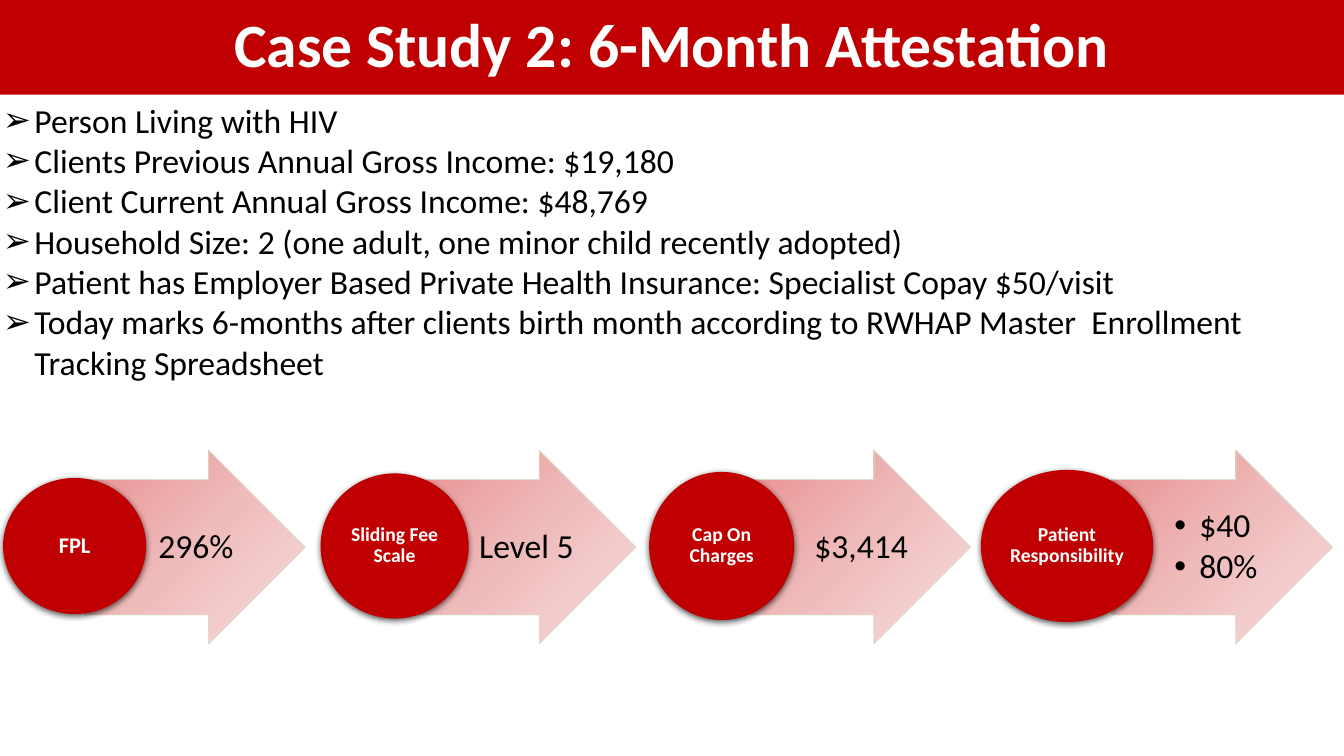
from dataclasses import dataclass

from pptx import Presentation
from pptx.dml.color import RGBColor
from pptx.enum.shapes import MSO_SHAPE
from pptx.enum.text import MSO_ANCHOR, MSO_AUTO_SIZE, PP_ALIGN
from pptx.oxml import parse_xml
from pptx.oxml.ns import nsdecls, qn
from pptx.shapes.autoshape import Shape
from pptx.slide import Slide
from pptx.text.text import TextFrame
from pptx.util import Pt


@dataclass(frozen=True)
class Theme:
    font: str = "Calibri"
    red: str = "C00000"
    white: str = "FFFFFF"
    black: str = "000000"
    arrow_line: str = "D5E3CF"
    arrow_stops: tuple[str, ...] = ("E98F8F", "EFBCBC", "F7DEDE")
    title_size: float = 44
    body_size: float = 24


@dataclass(frozen=True)
class TextStyle:
    size: float
    color: str
    bold: bool = False
    bullet: str = ""
    indent: float = 0
    line_spacing: float = 1
    space_after: float = 0


@dataclass(frozen=True)
class Step:
    label: str
    label_size: float
    results: tuple[str, ...]
    arrow_left: float
    circle_left: float
    circle_width: float
    circle_height: float
    bulleted: bool = False


THEME = Theme()
PAGE_WIDTH, PAGE_HEIGHT = 960, 540
TITLE_HEIGHT = 67.7
ARROW_TOP, ARROW_WIDTH, ARROW_HEIGHT = 321.8, 157.7, 138.2
RESULT_OFFSET, RESULT_WIDTH, RESULT_HEIGHT = 39.6, 77, 96.5
CIRCLE_MIDDLE = 390

FACTS = (
    "Person Living with HIV",
    "Clients Previous Annual Gross Income: $19,180",
    "Client Current Annual Gross Income: $48,769",
    "Household Size: 2 (one adult, one minor child recently adopted)",
    "Patient has Employer Based Private Health Insurance: Specialist Copay $50/visit",
    "Today marks 6-months after clients birth month according to RWHAP Master  Enrollment Tracking Spreadsheet",
)

STEPS = (
    Step("FPL", 16, ("296%",), 60.5, 2.2, 102.2, 97.2),
    Step("Sliding Fee Scale", 14, ("Level 5",), 296.6, 229, 105.8, 103.7),
    Step("Cap On Charges", 14, ("$3,414",), 535.7, 463.7, 103.7, 105.8),
    Step("Patient Responsibility", 14, ("$40", "80%"), 794.2, 700.6, 123.1, 108.7, True),
)


def write(frame: TextFrame, lines: tuple[str, ...], style: TextStyle) -> None:
    for number, line in enumerate(lines):
        para = frame.paragraphs[0] if number == 0 else frame.add_paragraph()
        para.alignment = PP_ALIGN.LEFT if style.bullet else PP_ALIGN.CENTER
        if style.bullet:
            properties = para._p.get_or_add_pPr()
            properties.set("marL", str(Pt(style.indent)))
            properties.set("indent", str(-Pt(style.indent)))
            properties.append(parse_xml(f'<a:buFont {nsdecls("a")} typeface="Arial"/>'))
            properties.append(parse_xml(f'<a:buChar {nsdecls("a")} char="{style.bullet}"/>'))
        para.line_spacing = style.line_spacing
        para.space_before = Pt(0)
        para.space_after = Pt(style.space_after)
        span = para.add_run()
        span.text = line
        span.font.name = THEME.font
        span.font.size = Pt(style.size)
        span.font.bold = style.bold
        span.font.color.rgb = RGBColor.from_string(style.color)


def set_insets(frame: TextFrame, left: float, top: float, right: float, bottom: float) -> None:
    frame.margin_left, frame.margin_top = Pt(left), Pt(top)
    frame.margin_right, frame.margin_bottom = Pt(right), Pt(bottom)
    frame.vertical_anchor = MSO_ANCHOR.MIDDLE
    frame.word_wrap = True


def fill_solid(shape: Shape, color: str) -> None:
    shape.fill.solid()
    shape.fill.fore_color.rgb = RGBColor.from_string(color)


def fill_from_corner(shape: Shape, colors: tuple[str, ...]) -> None:
    interval = 100000 // (len(colors) - 1)
    stops = "".join(
        f'<a:gs pos="{number * interval}"><a:srgbClr val="{color}"/></a:gs>'
        for number, color in enumerate(colors)
    )
    gradient = parse_xml(
        f'<a:gradFill {nsdecls("a")} rotWithShape="1"><a:gsLst>{stops}</a:gsLst>'
        '<a:path path="circle"><a:fillToRect r="100000" b="100000"/></a:path></a:gradFill>'
    )
    shape.fill.background()
    properties = shape._element.spPr
    properties.replace(properties.find(qn("a:noFill")), gradient)


def add_title(page: Slide) -> None:
    title = page.shapes.title
    title.left, title.top = Pt(0), Pt(0)
    title.width, title.height = Pt(PAGE_WIDTH), Pt(TITLE_HEIGHT)
    fill_solid(title, THEME.red)
    title.text_frame.auto_size = MSO_AUTO_SIZE.NONE
    title.text_frame.vertical_anchor = MSO_ANCHOR.MIDDLE
    style = TextStyle(THEME.title_size, THEME.white, bold=True, line_spacing=0.9)
    write(title.text_frame, ("Case Study 2: 6-Month Attestation",), style)


def add_facts(page: Slide) -> None:
    box = page.shapes.add_textbox(Pt(-5), Pt(TITLE_HEIGHT), Pt(949.7), Pt(254.2))
    box.text_frame.word_wrap = True
    write(box.text_frame, FACTS, TextStyle(THEME.body_size, THEME.black, bullet="➢", indent=22.5))


def add_arrow(page: Slide, step: Step) -> None:
    arrow = page.shapes.add_shape(
        MSO_SHAPE.RIGHT_ARROW, Pt(step.arrow_left), Pt(ARROW_TOP), Pt(ARROW_WIDTH), Pt(ARROW_HEIGHT)
    )
    arrow.adjustments[0], arrow.adjustments[1] = 0.7, 0.5
    arrow.shadow.inherit = False
    fill_from_corner(arrow, THEME.arrow_stops)
    arrow.line.color.rgb = RGBColor.from_string(THEME.arrow_line)
    arrow.line.width = Pt(0.5)
    line_color = arrow.line._ln.find(".//" + qn("a:srgbClr"))
    line_color.append(parse_xml(f'<a:alpha {nsdecls("a")} val="90000"/>'))


def add_results(page: Slide, step: Step) -> None:
    box = page.shapes.add_textbox(
        Pt(step.arrow_left + RESULT_OFFSET),
        Pt(ARROW_TOP + (ARROW_HEIGHT - RESULT_HEIGHT) / 2),
        Pt(RESULT_WIDTH),
        Pt(RESULT_HEIGHT),
    )
    set_insets(box.text_frame, 5, 1.5, 2.2, 1.5)
    style = TextStyle(
        THEME.body_size,
        THEME.black,
        bullet="•" if step.bulleted else "",
        indent=18,
        line_spacing=0.9,
        space_after=3.6 if step.bulleted else 0,
    )
    write(box.text_frame, step.results, style)


def add_circle(page: Slide, step: Step) -> None:
    circle = page.shapes.add_shape(
        MSO_SHAPE.OVAL,
        Pt(step.circle_left),
        Pt(CIRCLE_MIDDLE - step.circle_height / 2),
        Pt(step.circle_width),
        Pt(step.circle_height),
    )
    fill_solid(circle, THEME.red)
    circle.line.fill.background()
    circle.shadow.inherit = False
    circle._element.spPr.find(qn("a:effectLst")).append(parse_xml(
        f'<a:outerShdw {nsdecls("a")} blurRad="{Pt(4.5)}" dist="{Pt(1.5)}" dir="5400000" rotWithShape="0">'
        f'<a:srgbClr val="{THEME.black}"><a:alpha val="63000"/></a:srgbClr></a:outerShdw>'
    ))
    set_insets(circle.text_frame, 0.7, 0.7, 0.7, 0.7)
    style = TextStyle(step.label_size, THEME.white, bold=True, line_spacing=0.9)
    write(circle.text_frame, (step.label,), style)


def main() -> None:
    deck = Presentation()
    deck.slide_width, deck.slide_height = Pt(PAGE_WIDTH), Pt(PAGE_HEIGHT)
    page = deck.slides.add_slide(deck.slide_layouts.get_by_name("Title Only"))
    add_title(page)
    for step in STEPS:
        add_arrow(page, step)
        add_results(page, step)
        add_circle(page, step)
    add_facts(page)
    deck.save("out.pptx")


if __name__ == "__main__":
    main()
